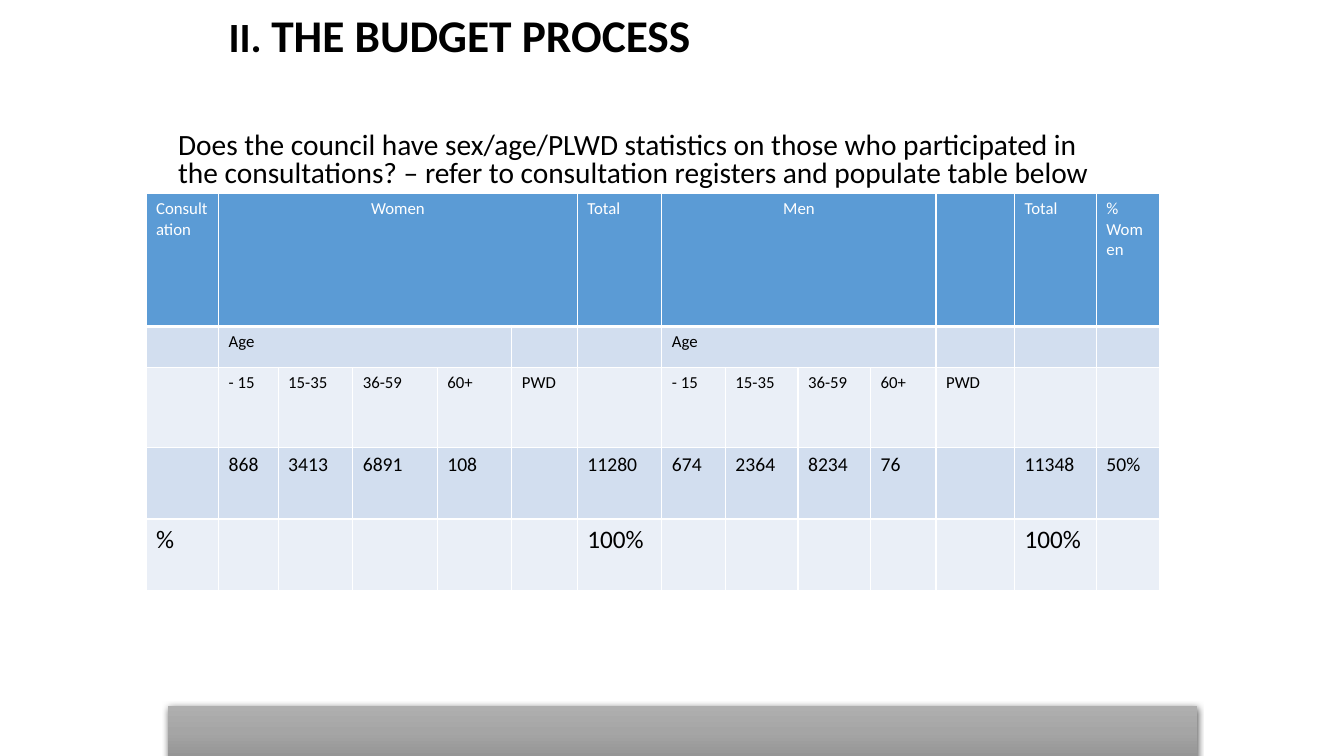
from copy import deepcopy

from pptx import Presentation
from pptx.dml.color import RGBColor
from pptx.enum.shapes import MSO_SHAPE
from pptx.enum.text import MSO_ANCHOR, PP_ALIGN
from pptx.oxml import parse_xml
from pptx.oxml.ns import nsdecls, qn
from pptx.util import Cm, Pt

BLACK = RGBColor(0x00, 0x00, 0x00)
WHITE = RGBColor(0xFF, 0xFF, 0xFF)
HEADER_BLUE = RGBColor(0x5B, 0x9B, 0xD5)
BAND_DARK = RGBColor(0xD2, 0xDE, 0xEF)
BAND_LIGHT = RGBColor(0xEA, 0xEF, 0xF7)
BAR_GREYS = [RGBColor(0xAF, 0xAF, 0xAF), RGBColor(0xA5, 0xA5, 0xA5), RGBColor(0x93, 0x93, 0x93)]


def style_run(run, size, color, bold=False):
    run.font.name = "Calibri"
    run.font.size = Pt(size)
    run.font.bold = bold
    run.font.color.rgb = color


def add_border(cell, side, width):
    properties = cell._tc.get_or_add_tcPr()
    properties.append(parse_xml(
        f'<a:{side} {nsdecls("a")} w="{Pt(width)}"><a:solidFill>'
        f'<a:srgbClr val="{WHITE}"/></a:solidFill></a:{side}>'))


presentation = Presentation()
presentation.slide_width = Cm(33.87)
presentation.slide_height = Cm(19.05)
slide = presentation.slides.add_slide(presentation.slide_layouts[6])

# Title, kept high in its box by a deep bottom margin
title = slide.shapes.add_textbox(Cm(5.51), Cm(0.64), Cm(22.86), Cm(1.78))
title.text_frame.word_wrap = True
title.text_frame.vertical_anchor = MSO_ANCHOR.MIDDLE
title.text_frame.margin_bottom = Cm(1.3)
paragraph = title.text_frame.paragraphs[0]
paragraph.line_spacing = 0.9
for text, size in [("II. ", 29.7), ("THE BUDGET PROCESS", 32.4)]:
    run = paragraph.add_run()
    run.text = text
    style_run(run, size, BLACK, bold=True)

# Consultation table
column_widths = [1.83, 1.5, 1.88, 2.13, 1.88, 1.65, 2.13, 1.6, 1.83, 1.83, 1.65, 1.98, 2.06, 1.6]
row_heights = [3.35, 1.04, 2.01, 1.8, 1.8]
ages = ["- 15", "15-35", "36-59", "60+", "PWD"]
rows = [
    ["Consultation", "Women", "", "", "", "", "Total", "Men", "", "", "", "", "Total", "% Women"],
    ["", "Age", "", "", "", "", "", "Age", "", "", "", "", "", ""],
    ["", *ages, "", *ages, "", ""],
    ["", "868", "3413", "6891", "108", "", "11280",
     "674", "2364", "8234", "76", "", "11348", "50%"],
    ["%", "", "", "", "", "", "100%", "", "", "", "", "", "100%", ""],
]
text_sizes = [12, 12, 12, 14, 18]
row_fills = [HEADER_BLUE, BAND_DARK, BAND_LIGHT, BAND_DARK, BAND_LIGHT]

table = slide.shapes.add_table(len(rows), len(column_widths), Cm(3.68), Cm(4.88),
                               Cm(sum(column_widths)), Cm(sum(row_heights))).table
for column, width in zip(table.columns, column_widths):
    column.width = Cm(width)
for row, height in zip(table.rows, row_heights):
    row.height = Cm(height)

for row_index, texts in enumerate(rows):
    for column_index, text in enumerate(texts):
        cell = table.cell(row_index, column_index)
        for side in ("lnL", "lnR", "lnT", "lnB"):
            add_border(cell, side, 3 if row_index == 0 and side == "lnB" else 1)
        cell.fill.solid()
        cell.fill.fore_color.rgb = row_fills[row_index]
        if text:
            cell.text_frame.text = text
            paragraph = cell.text_frame.paragraphs[0]
            if text in ("Women", "Men"):
                paragraph.alignment = PP_ALIGN.CENTER
            style_run(paragraph.runs[0], text_sizes[row_index], BLACK if row_index else WHITE)

for row_index, first, last in [(0, 1, 5), (0, 7, 10), (1, 1, 4), (1, 7, 10)]:
    table.cell(row_index, first).merge(table.cell(row_index, last))

# Question above the table
question = slide.shapes.add_textbox(Cm(4.24), Cm(3.23), Cm(24.13), Cm(1.78))
question.text_frame.word_wrap = True
question.text_frame.text = (
    "Does the council have sex/age/PLWD statistics on those who participated in the "
    "consultations? – refer to consultation registers and populate table below")
paragraph = question.text_frame.paragraphs[0]
paragraph.line_spacing = 0.8
paragraph.space_before = Pt(7.5)
style_run(paragraph.runs[0], 21, BLACK)

# Grey bar along the bottom, with a gradient and a soft shadow
bar = slide.shapes.add_shape(MSO_SHAPE.RECTANGLE, Cm(4.24), Cm(17.78), Cm(25.93), Cm(1.35))
bar.line.fill.background()
bar.fill.gradient()
bar.fill.gradient_angle = 270
stop_list = bar._element.spPr.find(qn("a:gradFill")).find(qn("a:gsLst"))
stop_list.insert(1, deepcopy(stop_list[0]))
for stop, grey, position in zip(bar.fill.gradient_stops, BAR_GREYS, (0, 0.5, 1)):
    stop.color.rgb = grey
    stop.position = position
bar._element.spPr.append(parse_xml(
    f'<a:effectLst {nsdecls("a")}><a:outerShdw blurRad="{Pt(4.5)}" dist="{Pt(1.5)}" '
    f'dir="5400000" algn="ctr" rotWithShape="0"><a:srgbClr val="{BLACK}">'
    '<a:alpha val="63000"/></a:srgbClr></a:outerShdw></a:effectLst>'))

presentation.save("out.pptx")
